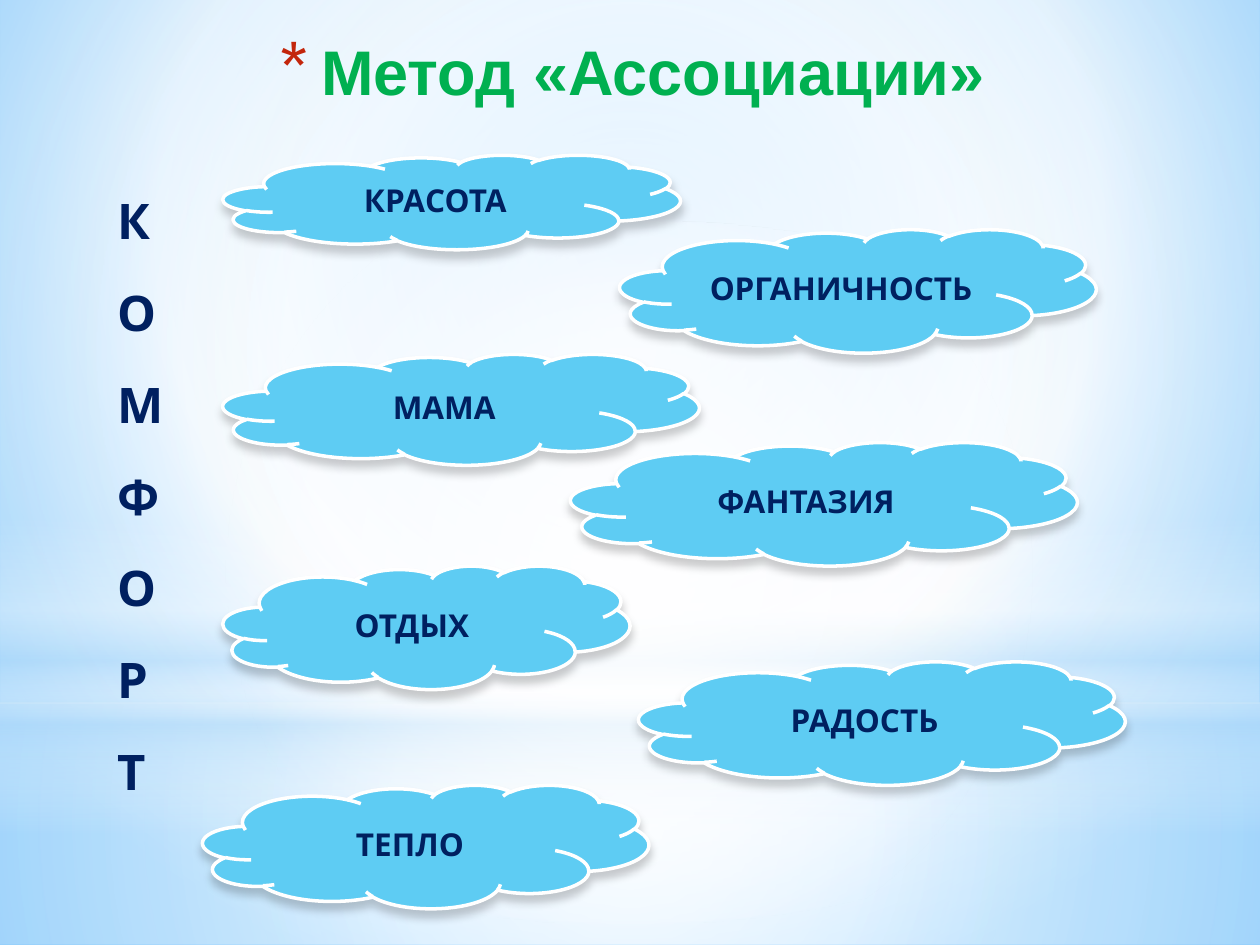
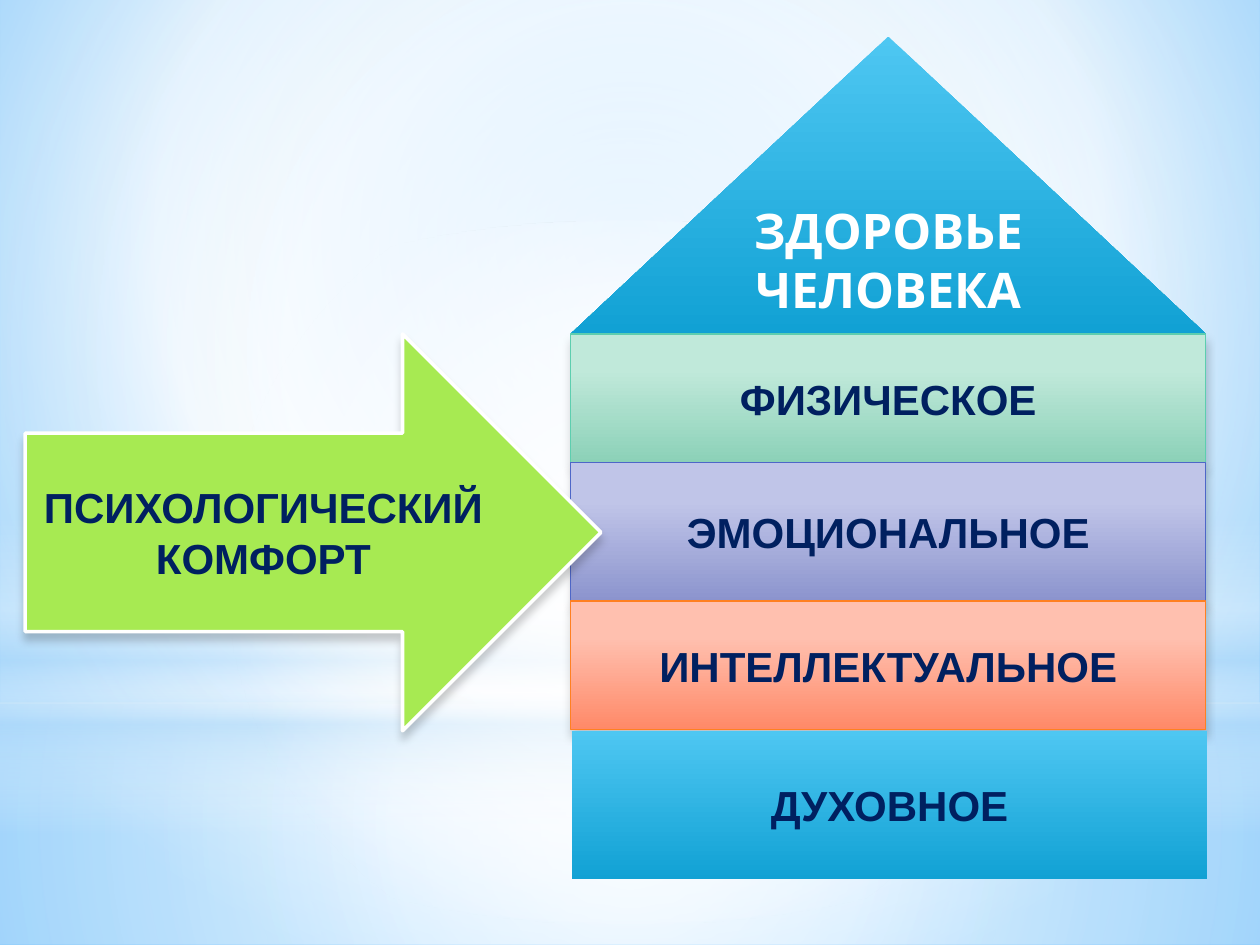
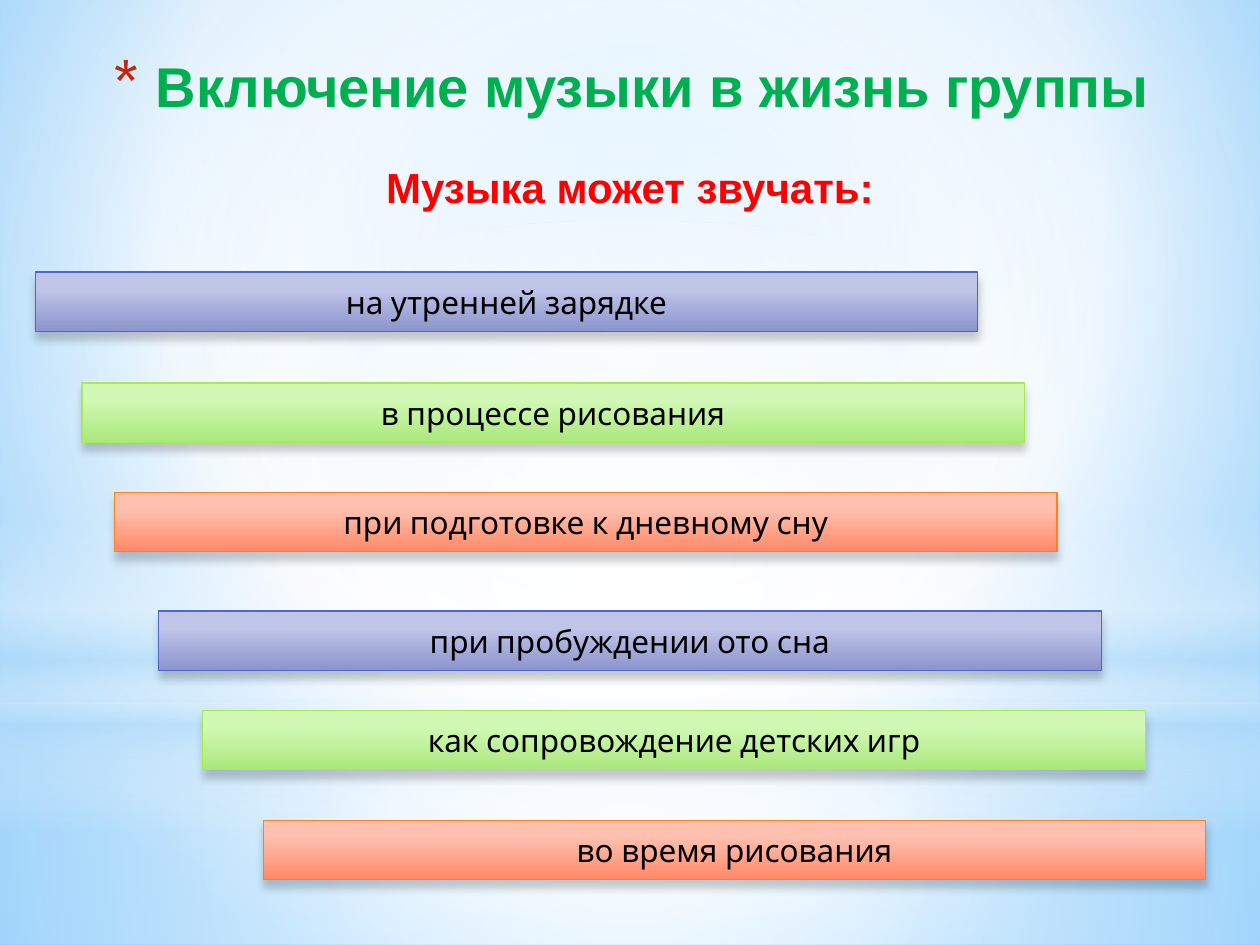
import pptx
import pptx.util
import pptx.dml.color
import pptx.enum.shapes
import pptx.enum.text
import pptx.oxml
import pptx.oxml.ns
import lxml.etree

Inches = pptx.util.Inches
Pt = pptx.util.Pt
FORM = pptx.enum.shapes.MSO_SHAPE
ALIGN = pptx.enum.text.PP_ALIGN
ANCHOR = pptx.enum.text.MSO_ANCHOR
qn = pptx.oxml.ns.qn

NAVY, GREEN, RED, WHITE, BLACK = "002060", "00B050", "FF0000", "FFFFFF", "000000"
SKY, LIME, HAZE, RUST = "5ECCF3", "A7EA52", "B4DCFA", "C3260C"
HEAD, PLAIN = "Arial", "Karla"
CENTER = (50, 50, 50, 50)

BLUE = ([(0, "4EC7F2"), (100, "11A1D4")], None)
MINT = ([(28, "C0E9DA"), (100, "8CD1B8")], "5DCEAF")
LILAC = ([(28, "C0C5E8"), (100, "8C94CE")], "4E67C8")
CORAL = ([(28, "FFC0AF"), (100, "FF8968")], "FF8021")
LEAF = ([(28, "D1F8B5"), (100, "AAE87B")], LIME)


def hue(code):
    return pptx.dml.color.RGBColor.from_string(code)


def node(parent, tag, **attrs):
    child = lxml.etree.SubElement(parent, qn(tag))
    for key, value in attrs.items():
        child.set(key, str(value))
    return child


def blend(fill, props, stops, focus=None):
    fill.gradient()
    grad = props.find(qn("a:gradFill"))
    for child in list(grad):
        grad.remove(child)
    row = node(grad, "a:gsLst")
    for place, code, *alpha in stops:
        stop = node(row, "a:gs", pos=place * 1000)
        color = node(stop, "a:srgbClr", val=code)
        if alpha:
            node(color, "a:alpha", val=alpha[0] * 1000)
    if focus:
        path = node(grad, "a:path", path="circle")
        sides = {side: share * 1000 for side, share in zip("ltrb", focus)}
        node(path, "a:fillToRect", **sides)
    else:
        node(grad, "a:lin", ang=90 * 60000, scaled=0)


def shade(shape):
    effect = shape.element.spPr.find(qn("a:effectLst"))
    drop = node(effect, "a:outerShdw", blurRad=Pt(5), dist=Pt(4),
                dir=90 * 60000, algn="ctr", rotWithShape=0)
    color = node(drop, "a:srgbClr", val=BLACK)
    node(color, "a:alpha", val=20000)


def style(para, font, size, code, bold=True):
    for run in para.runs:
        run.font.name = font
        run.font.size = Pt(size)
        run.font.bold = bold
        run.font.color.rgb = hue(code)


def place(shape, box):
    shape.left, shape.top, shape.width, shape.height = map(Inches, box)


def form(slide, kind, box, fill, line=None, width=0.75):
    shape = slide.shapes.add_shape(kind, *map(Inches, box))
    shape.shadow.inherit = False
    if isinstance(fill, str):
        shape.fill.solid()
        shape.fill.fore_color.rgb = hue(fill)
    else:
        blend(shape.fill, shape.element.spPr, *fill)
    if line:
        shape.line.color.rgb = hue(line)
        shape.line.width = Pt(width)
        shade(shape)
    else:
        shape.line.fill.background()
    return shape


def label(shape, text, font, size, code=NAVY, bold=True):
    frame = shape.text_frame
    frame.text = text
    frame.word_wrap = True
    frame.vertical_anchor = ANCHOR.MIDDLE
    frame.paragraphs[0].alignment = ALIGN.CENTER
    style(frame.paragraphs[0], font, size, code, bold)


def block(slide, box, tint, text, font, size, code=NAVY, bold=True):
    stops, line = tint
    shape = form(slide, FORM.RECTANGLE, box, (stops,), line)
    label(shape, text, font, size, code, bold)


def cloud(slide, box, text):
    label(form(slide, FORM.CLOUD, box, SKY, WHITE, 2), text, PLAIN, 18)


def frame_of(holder, box):
    place(holder, box)
    frame = holder.text_frame
    frame.word_wrap = True
    frame.auto_size = pptx.enum.text.MSO_AUTO_SIZE.NONE
    frame.vertical_anchor = ANCHOR.TOP
    return frame


def title(slide, box, text, size):
    para = frame_of(slide.shapes.title, box).paragraphs[0]
    para.text = text
    para.alignment = ALIGN.CENTER
    style(para, HEAD, size, GREEN)
    props = para._p.get_or_add_pPr()
    props.set("marL", str(Inches(0.35)))
    props.set("indent", str(Inches(-0.35)))
    node(node(props, "a:buClr"), "a:srgbClr", val=RUST)
    node(props, "a:buSzPct", val=128000)
    node(props, "a:buFont", typeface=PLAIN)
    node(props, "a:buChar", char="*")


def body(slide, box, lines, font, size, code, align, space):
    frame = frame_of(slide.placeholders[1], box)
    frame.text = "\n".join(lines)
    for para in frame.paragraphs:
        para.alignment = align
        para.line_spacing = space
        para.space_before = Pt(0)
        para.space_after = Pt(2)
        style(para, font, size, code)
        props = para._p.get_or_add_pPr()
        props.set("marL", "0")
        props.set("indent", "0")
        node(props, "a:buNone")


def backdrop(deck, slide):
    master = deck.slide_master
    sheet = master.element.cSld
    fill = master.background.fill
    blend(fill, sheet.bg.bgPr, [(0, "9ED5FF"), (60, WHITE), (100, "5BB9FF")],
          (20, 10, 20, 60))
    band = [(0, WHITE, 0), (29, WHITE, 30), (45, HAZE, 40),
            (55, WHITE, 26), (65, HAZE, 60), (100, WHITE, 0)]
    parts = [
        (FORM.RECTANGLE, (0, 5.58, 10, 1.92),
         ([(0, WHITE, 91), (37, WHITE, 76), (100, HAZE, 79)], CENTER)),
        (FORM.RECTANGLE, (0, 0, 10, 5.58),
         ([(0, WHITE, 89), (48, WHITE, 62), (100, HAZE, 79)], CENTER)),
        (FORM.RECTANGLE, (0, 4.12, 10, 2.5), (band,)),
        (FORM.OVAL, (0, 1.75, 10, 5.58),
         ([(0, WHITE), (56, WHITE, 0)], CENTER)),
    ]
    for rank, part in enumerate(parts):
        item = form(slide, *part).element
        item.nvSpPr.cNvPr.set("id", str(100 + rank))
        sheet.spTree.insert(2 + rank, item)


def comfort(slide):
    title(slide, (0.51, 0.21, 9, 1.02), "Метод «Ассоциации»", 36)
    body(slide, (0.83, 1.23, 8.43, 5.91), "КОМФОРТ", PLAIN, 28, NAVY,
         ALIGN.LEFT, 1.5)
    clouds = [
        ("КРАСОТА", 1.77, 1.23, 3.63, 0.75),
        ("ОРГАНИЧНОСТЬ", 4.92, 1.82, 3.78, 0.98),
        ("МАМА", 1.77, 2.81, 3.78, 0.88),
        ("ФАНТАЗИЯ", 4.53, 3.51, 4.02, 0.98),
        ("ОТДЫХ", 1.77, 4.49, 3.23, 0.98),
        ("РАДОСТЬ", 5.07, 5.25, 3.86, 0.98),
        ("ТЕПЛО", 1.61, 6.23, 3.54, 0.98),
    ]
    for text, *box in clouds:
        cloud(slide, box, text)


def house(slide):
    roof = form(slide, FORM.ISOSCELES_TRIANGLE, (4.53, 0.29, 5.04, 2.36),
                (BLUE[0],))
    label(roof, "ЗДОРОВЬЕ ЧЕЛОВЕКА", PLAIN, 28, WHITE)
    floors = [
        ("ФИЗИЧЕСКОЕ", MINT, 4.53, 2.65, 1.02),
        ("ЭМОЦИОНАЛЬНОЕ", LILAC, 4.53, 3.67, 1.1),
        ("ИНТЕЛЛЕКТУАЛЬНОЕ", CORAL, 4.53, 4.77, 1.02),
        ("ДУХОВНОЕ", BLUE, 4.54, 5.8, 1.18),
    ]
    for text, tint, left, top, height in floors:
        block(slide, (left, top, 5.04, height), tint, text, HEAD, 24)
    arrow = form(slide, FORM.RIGHT_ARROW, (0.2, 2.65, 4.57, 3.15), LIME, WHITE, 2)
    label(arrow, "ПСИХОЛОГИЧЕСКИЙ КОМФОРТ", HEAD, 24)


def music(slide):
    title(slide, (0.28, 0.36, 9.45, 1.25), "Включение музыки в жизнь группы", 32)
    body(slide, (0.63, 1.23, 8.74, 6.06), ["Музыка может звучать:"], HEAD, 24,
         RED, ALIGN.CENTER, 1)
    bars = [
        ("на утренней зарядке", 0.28, 2.16),
        ("в процессе рисования", 0.65, 3.04),
        ("при подготовке к дневному сну", 0.91, 3.91),
        ("при пробуждении ото сна", 1.26, 4.85),
        ("как сопровождение детских игр", 1.61, 5.64),
        ("во время рисования", 2.09, 6.51),
    ]
    for (text, left, top), tint in zip(bars, [LILAC, LEAF, CORAL] * 2):
        block(slide, (left, top, 7.48, 0.47), tint, text, PLAIN, 18, BLACK, False)


def main():
    deck = pptx.Presentation()
    deck.slide_width, deck.slide_height = Inches(10), Inches(7.5)
    listed, blank = deck.slide_layouts[1], deck.slide_layouts[6]
    first = deck.slides.add_slide(listed)
    backdrop(deck, first)
    comfort(first)
    house(deck.slides.add_slide(blank))
    music(deck.slides.add_slide(listed))
    deck.save("out.pptx")


if __name__ == "__main__":
    main()
